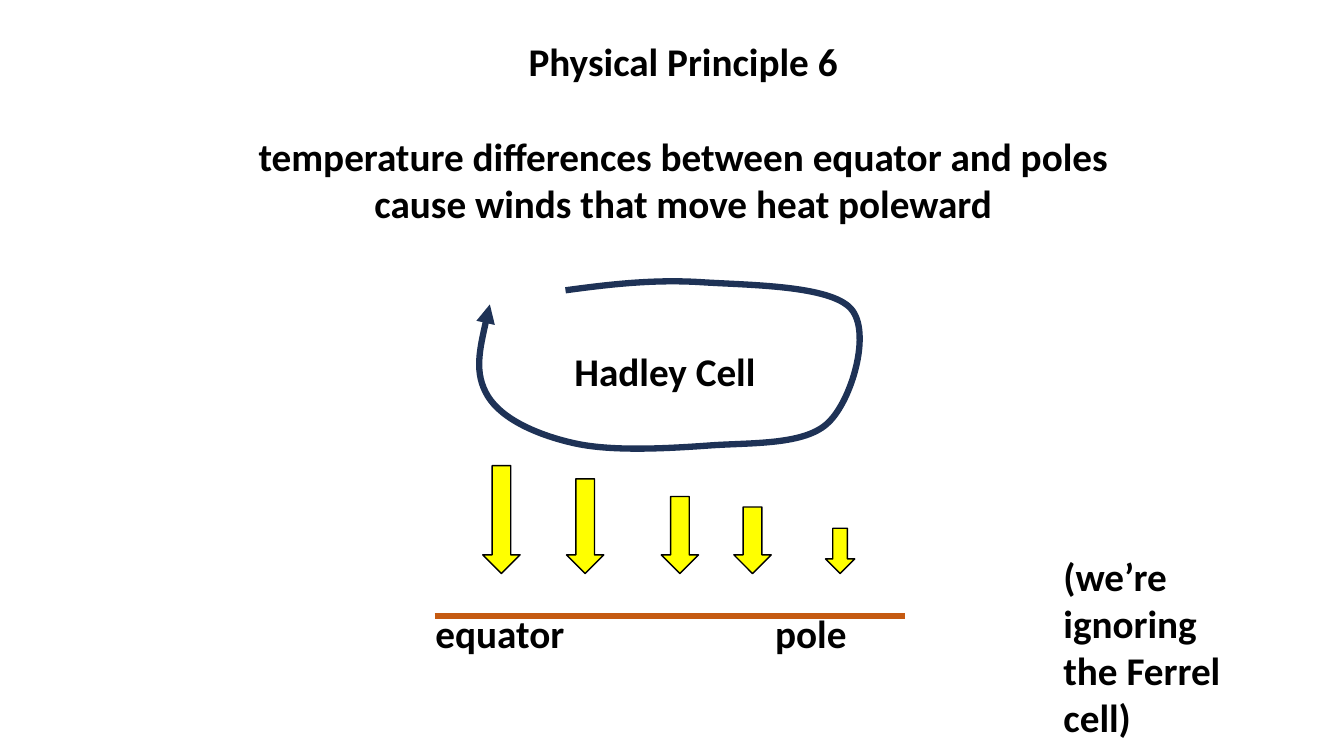
from dataclasses import dataclass

import pptx
import pptx.dml.color
import pptx.enum.shapes
import pptx.enum.text
import pptx.oxml
import pptx.oxml.ns
import pptx.util

ALIGN = pptx.enum.text.PP_ALIGN


@dataclass(frozen=True)
class Theme:
    font: str = "Calibri"
    text: str = "000000"
    heat: str = "FFFF00"
    ground: str = "C55A11"
    wind: str = "1E3256"
    size: float = 28
    gap: float = 34
    thin: float = 1
    thick: float = 4.5


class Board:
    def __init__(self, deck, slide, theme):
        self.deck, self.slide, self.theme = deck, slide, theme

    def x(self, share):
        return round(self.deck.slide_width * share / 100)

    def y(self, share):
        return round(self.deck.slide_height * share / 100)

    def box(self, left, top, width, height):
        return self.x(left), self.y(top), self.x(width), self.y(height)

    def color(self, value):
        return pptx.dml.color.RGBColor.from_string(value)

    def stroke(self, line, color, width):
        line.color.rgb = self.color(color)
        line.width = pptx.util.Pt(width)

    def set_text(self, frame, lines, align):
        frame.word_wrap = True
        frame.auto_size = pptx.enum.text.MSO_AUTO_SIZE.NONE
        frame.vertical_anchor = pptx.enum.text.MSO_ANCHOR.TOP
        frame.text = "\n".join(lines)
        for paragraph in frame.paragraphs:
            paragraph.alignment = align
            paragraph.line_spacing = 1.0
            paragraph.space_before = pptx.util.Pt(0)
            font = paragraph.font
            font.name, font.bold = self.theme.font, True
            font.size = pptx.util.Pt(self.theme.size)
            font.color.rgb = self.color(self.theme.text)

    def title(self, lines, *area):
        heading = self.slide.shapes.title
        heading.left, heading.top, heading.width, heading.height = self.box(*area)
        self.set_text(heading.text_frame, lines, ALIGN.CENTER)
        heading.text_frame.paragraphs[1].space_before = pptx.util.Pt(self.theme.gap)

    def label(self, words, *area):
        caption = self.slide.shapes.add_textbox(*self.box(*area))
        self.set_text(caption.text_frame, [words], ALIGN.LEFT)

    def heat_arrow(self, center, bottom, width, height):
        arrow = self.slide.shapes.add_shape(
            pptx.enum.shapes.MSO_SHAPE.DOWN_ARROW,
            *self.box(center - width / 2, bottom - height, width, height))
        arrow.shadow.inherit = False
        arrow.fill.solid()
        arrow.fill.fore_color.rgb = self.color(self.theme.heat)
        self.stroke(arrow.line, self.theme.text, self.theme.thin)

    def ground(self, start, end, level):
        surface = self.slide.shapes.add_connector(
            pptx.enum.shapes.MSO_CONNECTOR.STRAIGHT,
            self.x(start), self.y(level), self.x(end), self.y(level))
        self.stroke(surface.line, self.theme.ground, self.theme.thick)
        surface.element.spPr.append(pptx.oxml.parse_xml(
            f"<a:effectLst {pptx.oxml.ns.nsdecls('a')}/>"))

    def wind_loop(self, points):
        spots = [(self.x(across), self.y(down)) for across, down in points]
        builder = self.slide.shapes.build_freeform(*spots[0])
        builder.add_line_segments(spots[1:], close=False)
        loop = builder.convert_to_shape()
        loop.shadow.inherit = False
        loop.fill.background()
        self.stroke(loop.line, self.theme.wind, self.theme.thick)
        steps = loop.element.xpath(".//a:lnTo")
        for first in range(0, len(steps), 3):
            curve = pptx.oxml.parse_xml(
                f"<a:cubicBezTo {pptx.oxml.ns.nsdecls('a')}/>")
            steps[first].addprevious(curve)
            for step in steps[first:first + 3]:
                curve.append(step[0])
                step.getparent().remove(step)
        loop.element.xpath("./p:spPr/a:ln")[0].append(pptx.oxml.parse_xml(
            f'<a:headEnd {pptx.oxml.ns.nsdecls("a")} type="triangle"/>'))


HEAT_ARROWS = [
    (37.31, 2.78, 14.27), (43.54, 2.78, 12.53), (50.59, 2.78, 10.2),
    (55.99, 2.78, 8.8), (62.51, 2.18, 6),
]
HADLEY_LOOP = [
    (36.45, 40.27),
    (35.85, 44.8), (35.25, 49.33), (36.3, 52.4),
    (37.35, 55.47), (40.05, 57.6), (42.83, 58.67),
    (45.6, 59.73), (49.65, 59.33), (52.8, 58.93),
    (55.88, 58.53), (59.93, 58.93), (61.65, 55.87),
    (63.38, 52.93), (64.88, 43.87), (63.3, 40.8),
    (61.73, 37.73), (55.73, 37.73), (52.2, 37.33),
    (48.68, 36.93), (45.38, 37.6), (42.08, 38.4),
]


def main():
    deck = pptx.Presentation()
    deck.slide_width = pptx.util.Inches(13.33)
    deck.slide_height = pptx.util.Inches(7.5)
    board = Board(deck, deck.slides.add_slide(deck.slide_layouts[5]), Theme())

    board.title([
        "Physical Principle 6",
        "temperature differences between equator and poles",
        "cause winds that move heat poleward",
    ], 6.53, 4.27, 88.6, 32.8)
    for center, width, height in HEAT_ARROWS:
        board.heat_arrow(center, 75.87, width, height)
    board.ground(32.33, 67.37, 81.47)
    for place, left in (("equator", 31.66), ("pole", 56.94)):
        board.label(place, left, 80, 11.33, 13.87)
    board.wind_loop(HADLEY_LOOP)
    board.label("Hadley Cell", 42, 45.33, 16.05, 13.87)
    board.label("(we’re ignoring the Ferrel cell)", 78.39, 72.4, 16.05, 27.6)
    deck.save("out.pptx")


if __name__ == "__main__":
    main()
